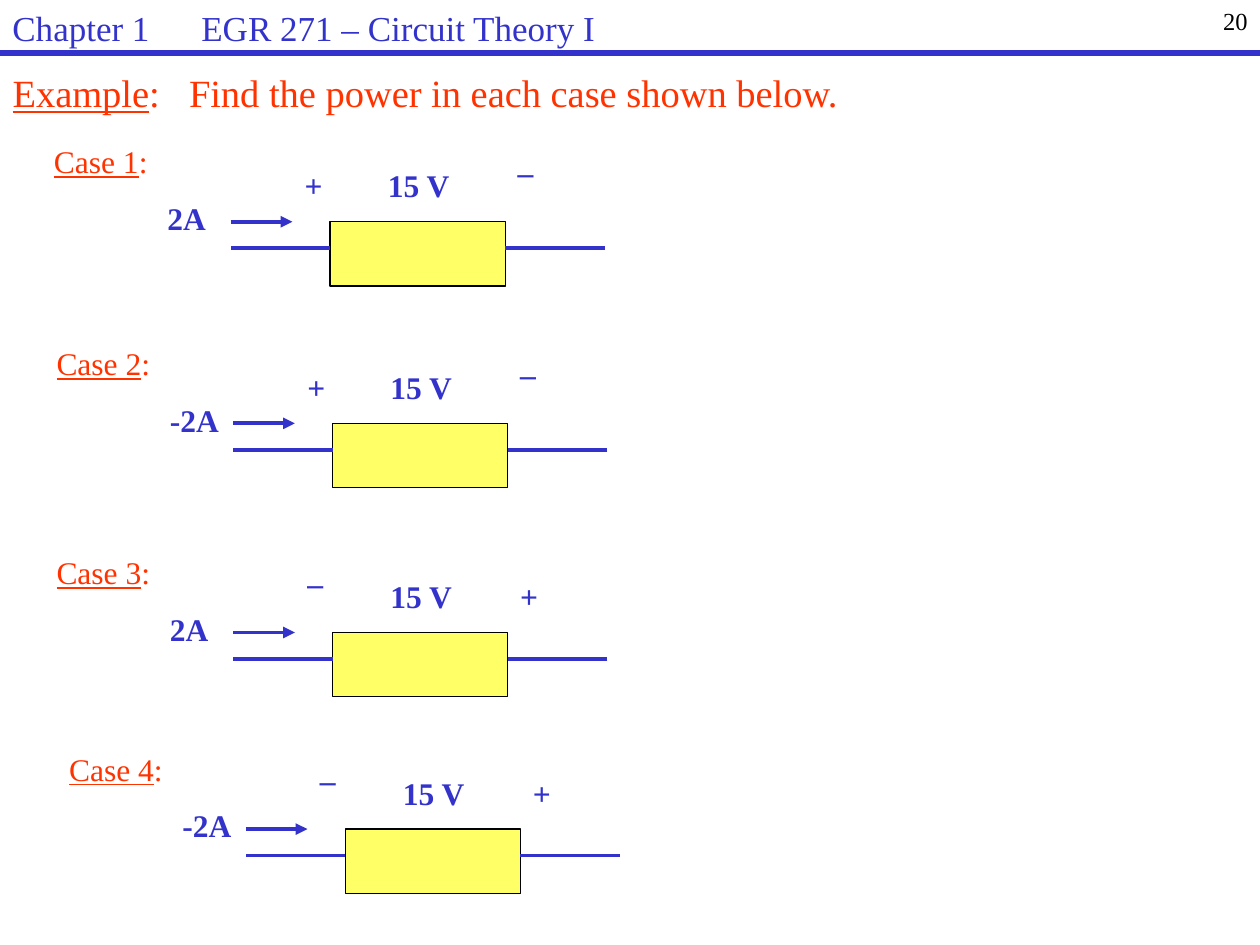
import pptx
import pptx.dml.color
import pptx.enum.shapes
import pptx.enum.text
import pptx.oxml
import pptx.oxml.ns
import pptx.util
from pptx.util import Inches

COLORS = {"blue": "3333CC", "red": "FF3300", "yellow": "FFFF66", "black": "000000"}
LEFT = pptx.enum.text.PP_ALIGN.LEFT
RIGHT = pptx.enum.text.PP_ALIGN.RIGHT


def write(box, parts, size, color, bold=False, align=LEFT, tab=None):
    """Fill a box with one line of (text, underlined) parts, with an optional tab stop."""
    frame = box.text_frame
    frame.word_wrap = True
    frame.auto_size = pptx.enum.text.MSO_AUTO_SIZE.NONE
    frame.vertical_anchor = pptx.enum.text.MSO_ANCHOR.TOP
    line = frame.paragraphs[0]
    line.alignment = align
    if tab:
        stops = pptx.oxml.parse_xml(
            f'<a:tabLst {pptx.oxml.ns.nsdecls("a")}><a:tab pos="{Inches(tab)}" algn="l"/></a:tabLst>')
        line._p.get_or_add_pPr().append(stops)
    for text, underlined in parts:
        run = line.add_run()
        run.text = text
        run.font.name = "Times New Roman"
        run.font.size = pptx.util.Pt(size)
        run.font.bold = bold
        run.font.underline = underlined
        run.font.color.rgb = pptx.dml.color.RGBColor.from_string(COLORS[color])
    return line


def add_line(shapes, x1, x2, y, width, arrow=False):
    """Draw a horizontal blue line, with an arrowhead at x2 if asked."""
    line = shapes.add_connector(pptx.enum.shapes.MSO_CONNECTOR.STRAIGHT,
                                Inches(x1), Inches(y), Inches(x2), Inches(y))
    line.line.color.rgb = pptx.dml.color.RGBColor.from_string(COLORS["blue"])
    line.line.width = pptx.util.Pt(width)
    if arrow:
        line.line._get_or_add_ln().append(pptx.oxml.parse_xml(
            f'<a:tailEnd {pptx.oxml.ns.nsdecls("a")} type="triangle"/>'))
    line._element.spPr.append(pptx.oxml.parse_xml(
        f'<a:effectLst {pptx.oxml.ns.nsdecls("a")}/>'))


prs = pptx.Presentation()
prs.slide_width, prs.slide_height = Inches(10), Inches(7.5)
slide = prs.slides.add_slide(prs.slide_layouts[5])

# Problem statement
problem = slide.shapes.title
problem.left, problem.top = Inches(0), Inches(0.5)
problem.width, problem.height = Inches(8.5), Inches(0.47)
write(problem, [("Example", True), (":\tFind the power in each case shown below.", False)],
      22, "red", tab=1.4)

# Cases: left, top, number, current, sign on the left, sign on the right
cases = [
    (0.33, 1.08, 1, "2A", "+", "_"),
    (0.35, 2.68, 2, "-2A", "+", "_"),
    (0.35, 4.34, 3, "2A", "_", "+"),
    (0.45, 5.9, 4, "-2A", "_", "+"),
]
SIGN_DROP = {"+": 0.19, "_": 0}

for left, top, number, current, left_sign, right_sign in cases:
    circuit = slide.shapes.add_group_shape().shapes

    element = circuit.add_shape(pptx.enum.shapes.MSO_SHAPE.RECTANGLE, Inches(left + 2.29),
                                Inches(top + 0.68), Inches(1.39), Inches(0.51))
    element.shadow.inherit = False
    element.fill.solid()
    element.fill.fore_color.rgb = pptx.dml.color.RGBColor.from_string(COLORS["yellow"])
    element.line.color.rgb = pptx.dml.color.RGBColor.from_string(COLORS["black"])
    element.line.width = pptx.util.Pt(0.75)

    add_line(circuit, left + 2.29, left + 1.5, top + 0.89, 2.25)
    add_line(circuit, left + 4.47, left + 3.68, top + 0.89, 2.25)
    add_line(circuit, left + 1.5, left + 1.99, top + 0.68, 2.25, arrow=True)

    for text, x, y, width in [
        (current, 0.9, 0.45, 0.7),
        ("15 V", 2.65, 0.19, 0.84),
        (left_sign, 1.99, SIGN_DROP[left_sign], 0.41),
        (right_sign, 3.68, SIGN_DROP[right_sign], 0.41),
    ]:
        label = circuit.add_textbox(Inches(left + x), Inches(top + y), Inches(width), Inches(0.44))
        write(label, [(text, False)], 18, "blue", bold=True)

    heading = circuit.add_textbox(Inches(left), Inches(top), Inches(1.49), Inches(0.44))
    write(heading, [(f"Case {number}", True), (":", False)], 18, "red")

# Page header
page_number = slide.shapes.add_textbox(Inches(7.92), Inches(0), Inches(2.08), Inches(0.42))
write(page_number, [("20", False)], 14, "black", align=RIGHT)
add_line(slide.shapes, 0, 10, 0.42, 3)
course = slide.shapes.add_textbox(Inches(0), Inches(0), Inches(5.5), Inches(0.33))
course_line = write(course, [("Chapter 1\tEGR 271 – Circuit Theory I", False)], 20, "blue", tab=1.5)
course_line.space_before = pptx.util.Pt(4)

prs.save("out.pptx")
